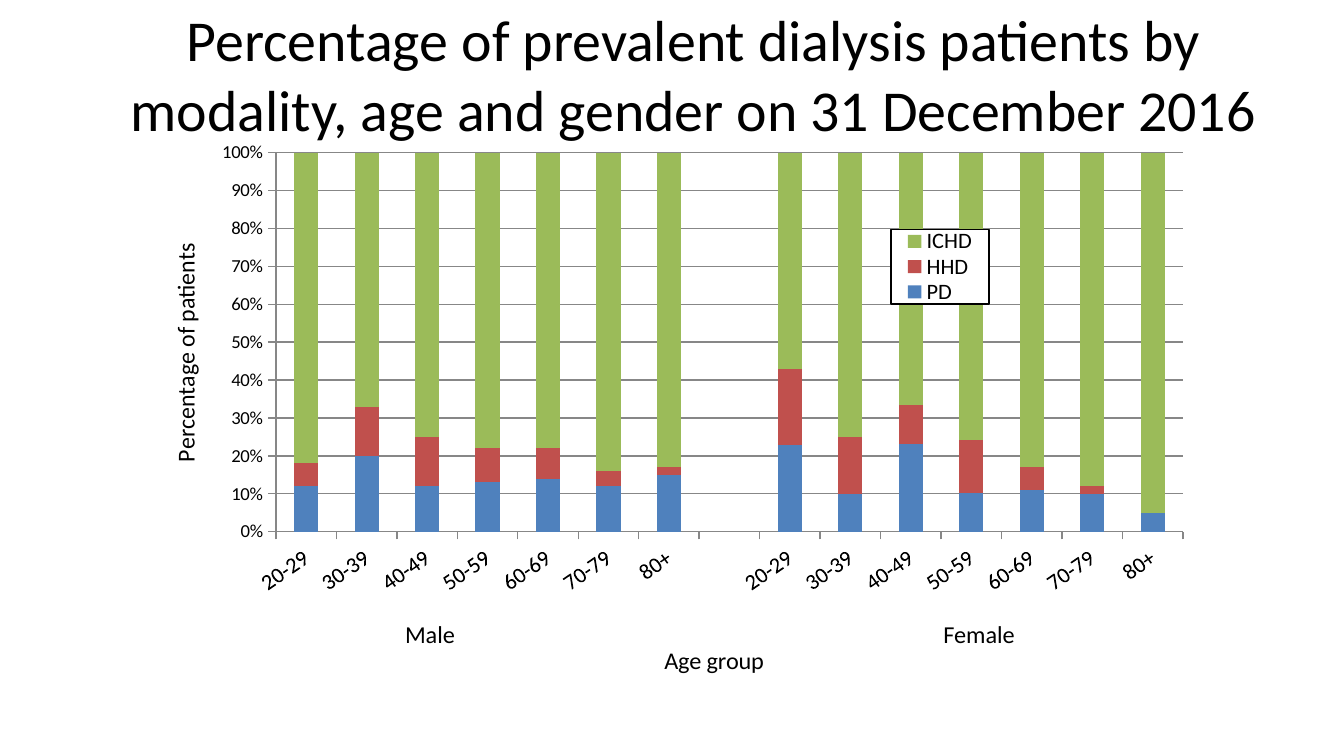
from lxml.etree import SubElement
from pptx import Presentation
from pptx.chart.data import CategoryChartData
from pptx.dml.color import RGBColor
from pptx.enum.chart import XL_CHART_TYPE as ChartType, XL_TICK_MARK as Tick
from pptx.enum.text import MSO_ANCHOR as Anchor, PP_ALIGN as Align
from pptx.oxml import parse_xml
from pptx.oxml.ns import nsdecls, qn
from pptx.util import Pt

PX = 914400 / 134.4
FONT = "Calibri"
COLORS = {"text": "000000", "paper": "FFFFFF", "grid": "878787",
          "PD": "4F81BD", "HHD": "C0504D", "ICHD": "9BBB59"}
RGB = {name: RGBColor.from_string(value) for name, value in COLORS.items()}
CHART_LEFT, CHART_TOP, CHART_WIDTH, CHART_HEIGHT = 142, 140, 1055, 544


def write(frame, text, size, align=Align.CENTER):
    paragraph = frame.paragraphs[0]
    paragraph.alignment = align
    run = paragraph.add_run()
    run.text = text
    run.font.name, run.font.size, run.font.bold = FONT, Pt(size), False
    run.font.color.rgb = RGB["text"]


def place(part, left, top, width=None, height=None):
    """Fix a chart part at a slide position in px, as fractions of the chart."""
    for old in part.findall(qn("c:layout")):
        part.remove(old)
    layout = parse_xml(f"<c:layout {nsdecls('c')}><c:manualLayout/></c:layout>")
    manual = layout[0]
    if part.tag == qn("c:plotArea"):
        SubElement(manual, qn("c:layoutTarget"), val="inner")
    for axis in "xy":
        SubElement(manual, qn(f"c:{axis}Mode"), val="edge")
    fractions = {"x": (left - CHART_LEFT) / CHART_WIDTH,
                 "y": (top - CHART_TOP) / CHART_HEIGHT}
    if width:
        fractions |= {"w": width / CHART_WIDTH, "h": height / CHART_HEIGHT}
    for key, fraction in fractions.items():
        SubElement(manual, qn(f"c:{key}"), val=f"{fraction:.4f}")
    overlay = part.find(qn("c:overlay"))
    if overlay is None:
        part.insert(0, layout)
    else:
        overlay.addprevious(layout)


prs = Presentation()
prs.slide_width, prs.slide_height = int(1344 * PX), int(756 * PX)
slide = prs.slides.add_slide(prs.slide_layouts[6])

# Title
title = slide.shapes.add_textbox(*(int(v * PX) for v in (79, 22, 1228, 103))).text_frame
title.word_wrap = True
title.vertical_anchor = Anchor.MIDDLE
write(title, "Percentage of prevalent dialysis patients by modality, "
             "age and gender on 31 December 2016", 31)

# Stacked columns: men, a gap, women
ages = ["20-29", "30-39", "40-49", "50-59", "60-69", "70-79", "80+"]
modalities = {
    "PD": ([12, 20, 12, 13, 14, 12, 15], [23, 10, 23, 10, 11, 10, 5]),
    "HHD": ([6, 13, 13, 9, 8, 4, 2], [20, 15, 10, 14, 6, 2, 0]),
    "ICHD": ([82, 67, 75, 78, 78, 84, 83], [57, 75, 66, 75, 83, 88, 95]),
}
data = CategoryChartData()
data.categories = ages + [""] + ages
for modality, (men, women) in modalities.items():
    data.add_series(modality, men + [None] + women)

chart = slide.shapes.add_chart(
    ChartType.COLUMN_STACKED_100,
    *(int(v * PX) for v in (CHART_LEFT, CHART_TOP, CHART_WIDTH, CHART_HEIGHT)),
    data).chart
chart.has_title = False
chart.font.name, chart.font.size = FONT, Pt(10)
chart.font.color.rgb = RGB["text"]
columns = chart.plots[0]
columns.gap_width, columns.overlap = 150, 100
columns.vary_by_categories = False
for series in columns.series:
    series.format.fill.solid()
    series.format.fill.fore_color.rgb = RGB[series.name]
place(chart._chartSpace.chart.plotArea, 276, 153, 907, 386)

# Axes
age_axis, share_axis = chart.category_axis, chart.value_axis
share_axis.minimum_scale, share_axis.maximum_scale = 0, 1
share_axis.major_unit = 0.1
share_axis.has_major_gridlines = True
share_axis.tick_labels.number_format = "0%"
share_axis.tick_labels.number_format_is_linked = False
for line in (age_axis.format.line, share_axis.format.line,
             share_axis.major_gridlines.format.line):
    line.color.rgb, line.width = RGB["grid"], Pt(0.75)
for axis, size, name, left, top in (
        (age_axis, 12, "Age group", 660, 650),
        (share_axis, 10, "Percentage of patients", 165, 245)):
    axis.major_tick_mark, axis.minor_tick_mark = Tick.OUTSIDE, Tick.NONE
    axis.tick_labels.font.size = Pt(size)
    axis.tick_labels.font.name = FONT
    axis.tick_labels.font.color.rgb = RGB["text"]
    write(axis.axis_title.text_frame, name, 13)
    place(axis.axis_title._element, left, top)
age_axis._element.txPr.bodyPr.set("rot", str(-35 * 60000))
share_body = share_axis.axis_title._element.find(".//" + qn("a:bodyPr"))
share_body.set("rot", str(-90 * 60000))
share_body.set("vert", "horz")

# Legend
chart.has_legend = True
legend = chart.legend
legend.include_in_layout = True
legend.font.size, legend.font.name = Pt(12), FONT
legend.font.color.rgb = RGB["text"]
place(legend._element, 891, 230, 98, 76)
legend_box = parse_xml(
    f"<c:spPr {nsdecls('c', 'a')}>"
    f"<a:solidFill><a:srgbClr val='{COLORS['paper']}'/></a:solidFill>"
    f"<a:ln w='9525'><a:solidFill><a:srgbClr val='{COLORS['text']}'/></a:solidFill></a:ln>"
    "</c:spPr>")
legend._element.find(qn("c:overlay")).addnext(legend_box)

# Gender labels under the age groups
for gender, center in (("Male", 430), ("Female", 979)):
    label = slide.shapes.add_textbox(
        *(int(v * PX) for v in (center - 70, 614, 140, 40))).text_frame
    label.word_wrap = True
    label.vertical_anchor = Anchor.MIDDLE
    write(label, gender, 13)

prs.save("out.pptx")
